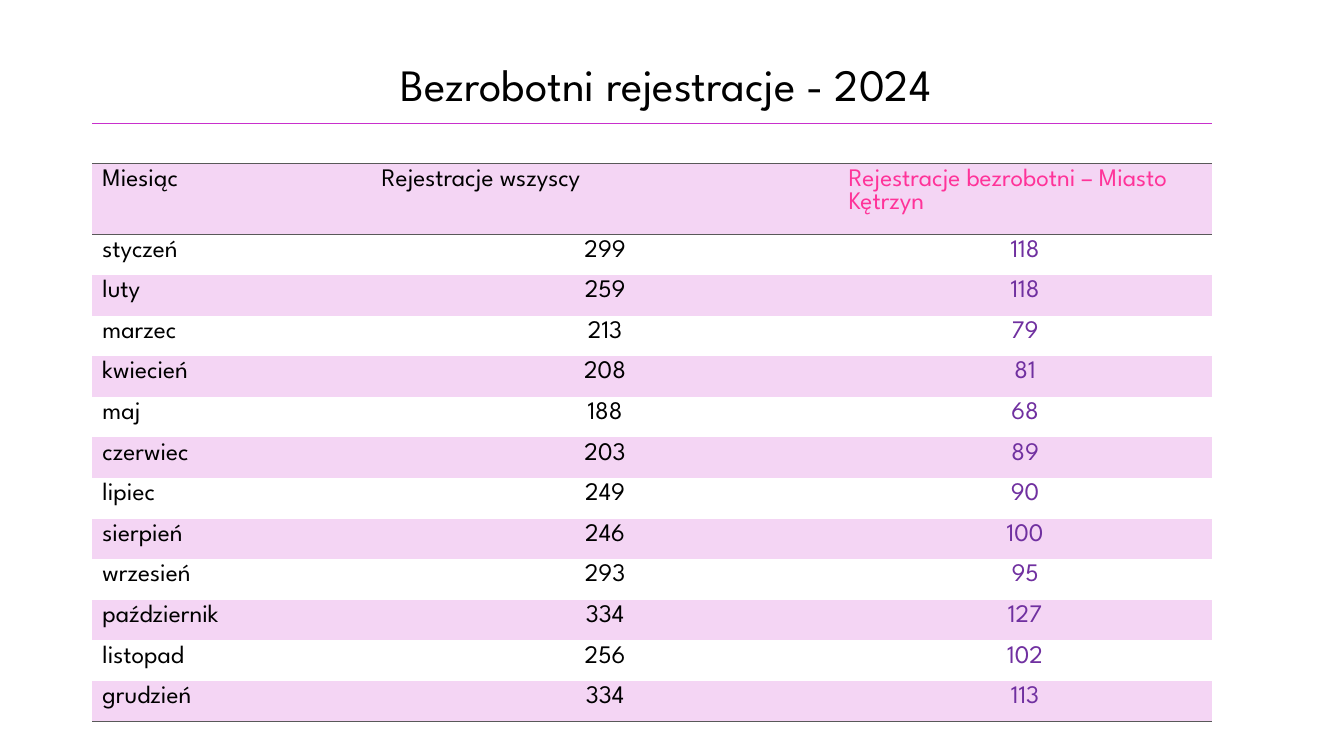
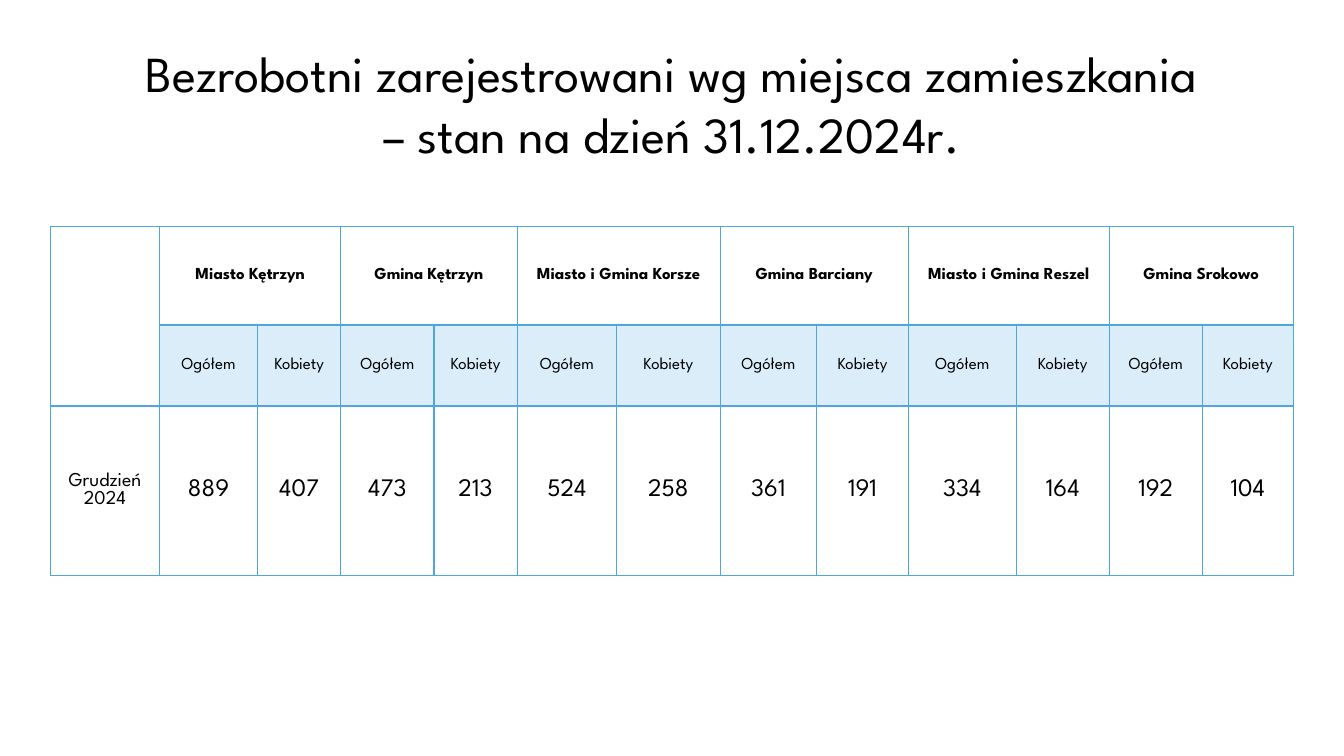
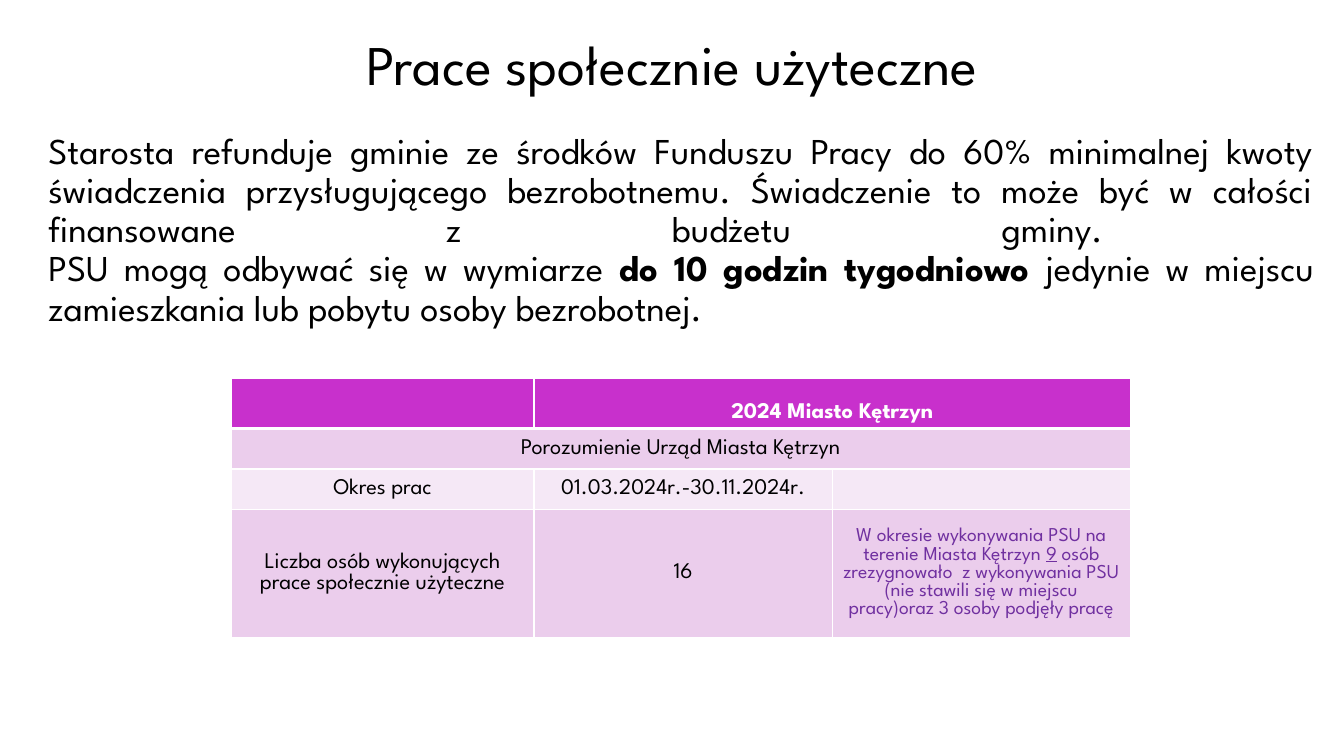
"""Builds three slides on registered unemployment in 2024."""
from pptx import Presentation
from pptx.dml.color import RGBColor
from pptx.enum.text import MSO_ANCHOR as Anchor, PP_ALIGN as Align
from pptx.oxml.ns import qn
from pptx.util import Pt
from lxml.etree import SubElement

FONT = "League Spartan"
BLACK, WHITE = "000000", "FFFFFF"
MAGENTA, PINK, PURPLE, BLUE = "C830CC", "FF3399", "7030A0", "4EA6DC"
LILAC, SKY, MAUVE, PALE_MAUVE, GREY = "F4D5F4", "DBEDF8", "EBCDEC", "F5E8F6", "595959"
NO_STYLE = "{2D5ABB26-0587-4C30-8999-92F81FD0307C}"

REGISTRATION_HEADS = ["Miesiąc", "Rejestracje wszyscy",
                      "Rejestracje bezrobotni – Miasto Kętrzyn"]
REGISTRATIONS = [
    ("styczeń", 299, 118), ("luty", 259, 118), ("marzec", 213, 79),
    ("kwiecień", 208, 81), ("maj", 188, 68), ("czerwiec", 203, 89),
    ("lipiec", 249, 90), ("sierpień", 246, 100), ("wrzesień", 293, 95),
    ("październik", 334, 127), ("listopad", 256, 102), ("grudzień", 334, 113),
]
RESIDENCE = [
    ("Miasto Kętrzyn", 889, 407), ("Gmina Kętrzyn", 473, 213),
    ("Miasto i Gmina Korsze", 524, 258), ("Gmina Barciany", 361, 191),
    ("Miasto i Gmina Reszel", 334, 164), ("Gmina Srokowo", 192, 104),
]
RESIDENCE_WIDTHS = [78, 70, 59.5, 66.5, 59.5, 71, 74, 69, 65.5, 77, 66.5, 66.5, 65]
SOCIAL_WORK = [
    ("Starosta refunduje gminie ze środków Funduszu Pracy do 60% minimalnej kwoty "
     "świadczenia przysługującego bezrobotnemu. Świadczenie to może być w całości "
     "finansowane z budżetu gminy. \nPSU mogą odbywać się w wymiarze ", {}),
    ("do 10 godzin tygodniowo", {"bold": True}),
    (" jedynie w miejscu zamieszkania lub pobytu osoby bezrobotnej.", {}),
]
RESIGNATIONS = [
    ("W okresie wykonywania PSU na terenie Miasta Kętrzyn ", {}),
    ("9", {"underline": True}),
    (" osób zrezygnowało  z wykonywania PSU (nie stawili się w miejscu pracy)"
     "oraz 3 osoby podjęły pracę", {}),
]
AGREEMENT = "Porozumienie Urząd Miasta Kętrzyn"
WORK_ROWS = [
    (PALE_MAUVE, ["Okres prac", "01.03.2024r.-30.11.2024r.", ""]),
    (MAUVE, ["Liczba osób wykonujących prace społecznie użyteczne", "16", RESIGNATIONS]),
]


def rgb(color):
    """Turn a hex string into a colour."""
    return RGBColor.from_string(color)


def write(frame, content, size=18, color=BLACK, bold=False, align=Align.LEFT, spacing=None):
    """Write a string or a list of (text, format) runs as one paragraph."""
    paragraph = frame.paragraphs[0]
    paragraph.alignment = align
    if spacing:
        paragraph.line_spacing = Pt(spacing)
    for text, extra in [(content, {})] if isinstance(content, str) else content:
        for number, line in enumerate(text.split("\n")):
            if number:
                paragraph.add_line_break()
            run = paragraph.add_run()
            run.text = line
            run.font.name, run.font.size = FONT, Pt(size)
            run.font.color.rgb = rgb(color)
            run.font.bold = extra.get("bold", bold)
            run.font.underline = extra.get("underline", False)


def add_text(slide, box, content, anchor=Anchor.TOP, **style):
    """Add a wrapped text box."""
    frame = slide.shapes.add_textbox(*map(Pt, box)).text_frame
    frame.word_wrap = True
    frame.vertical_anchor = anchor
    write(frame, content, **style)


def new_slide(deck, title, box, size):
    """Add a blank slide with a centred title."""
    slide = deck.slides.add_slide(deck.slide_layouts[6])
    add_text(slide, box, title, anchor=Anchor.MIDDLE, size=size,
             align=Align.CENTER, spacing=round(size * 1.21, 1))
    return slide


def add_grid(slide, left, top, widths, heights):
    """Add an unstyled table with the given column widths and row heights."""
    table = slide.shapes.add_table(len(heights), len(widths), Pt(left), Pt(top),
                                   Pt(sum(widths)), Pt(sum(heights))).table
    table.first_row = table.horz_banding = False
    table._tbl.tblPr.find(qn("a:tableStyleId")).text = NO_STYLE
    for column, width in zip(table.columns, widths):
        column.width = Pt(width)
    for row, height in zip(table.rows, heights):
        row.height = Pt(height)
    return table


def fill_cell(cell, content="", fill=None, anchor=Anchor.MIDDLE, borders=None, **style):
    """Set text, borders given as {side: (colour, width)}, and fill of a cell."""
    cell.vertical_anchor = anchor
    if content:
        write(cell.text_frame, content, **style)
    properties = cell._tc.get_or_add_tcPr()
    for side in "LRTB":
        if side in (borders or {}):
            color, width = borders[side]
            line = SubElement(properties, qn(f"a:ln{side}"), w=str(Pt(width)))
            SubElement(SubElement(line, qn("a:solidFill")), qn("a:srgbClr"), val=color)
    if fill:
        cell.fill.solid()
        cell.fill.fore_color.rgb = rgb(fill)
    else:
        cell.fill.background()


def frame_sides(color, bottom=1):
    """Give four one-point borders, with a chosen bottom width."""
    return {**{side: (color, 1) for side in "LRT"}, "B": (color, bottom)}


def registrations_slide(deck):
    """Monthly registrations."""
    slide = new_slide(deck, "Bezrobotni rejestracje - 2024", (66, 30, 820, 59), 32)
    months = len(REGISTRATIONS)
    table = add_grid(slide, 66, 88, [199.5, 333.5, 266.5], [29, 40.5] + [29] * months)
    table.cell(0, 0).merge(table.cell(0, 2))
    for column in range(3):
        fill_cell(table.cell(0, column), borders={"T": (MAGENTA, 1), "B": (GREY, 1)})
    for row, values in enumerate([REGISTRATION_HEADS] + REGISTRATIONS, 1):
        head = row == 1
        borders = {"T": (GREY, 1)} if head else {"B": (GREY, 1)} if row > months else None
        for column, value in enumerate(values):
            accent = PINK if head else PURPLE
            fill_cell(table.cell(row, column), str(value), LILAC if row % 2 else None,
                      Anchor.TOP, borders, color=accent if column == 2 else BLACK,
                      align=Align.LEFT if head or column == 0 else Align.CENTER)


def residence_slide(deck):
    """Unemployed people by place of residence."""
    slide = new_slide(deck, "Bezrobotni zarejestrowani wg miejsca zamieszkania\n"
                      "– stan na dzień 31.12.2024r.", (26, 21, 908, 104), 36)
    table = add_grid(slide, 36, 162, RESIDENCE_WIDTHS, [70, 58, 121])
    thin, thick = frame_sides(BLUE), frame_sides(BLUE, 2)
    table.cell(0, 0).merge(table.cell(1, 0))
    for row in range(2):
        fill_cell(table.cell(row, 0), borders=thick)
    fill_cell(table.cell(2, 0), "Grudzień 2024", borders=thin, size=14, align=Align.CENTER)
    for number, (place, total, women) in enumerate(RESIDENCE):
        first = 1 + 2 * number
        table.cell(0, first).merge(table.cell(0, first + 1))
        fill_cell(table.cell(0, first), place, borders=thick, size=12, bold=True,
                  align=Align.CENTER)
        fill_cell(table.cell(0, first + 1), borders=thick)
        for column, (label, count) in enumerate([("Ogółem", total), ("Kobiety", women)], first):
            fill_cell(table.cell(1, column), label, SKY, size=12, align=Align.CENTER,
                      borders={**thin, "T": (BLUE, 2)})
            fill_cell(table.cell(2, column), str(count), borders=thin, align=Align.CENTER)


def social_work_slide(deck):
    """Socially useful work."""
    slide = new_slide(deck, "Prace społecznie użyteczne", (66, 17.5, 828, 55), 40)
    add_text(slide, (27.5, 91, 918.5, 150), SOCIAL_WORK, size=26,
             align=Align.JUSTIFY, spacing=28)
    table = add_grid(slide, 165, 270, [216.5, 213, 213], [36, 29, 29, 72])
    thin, thick = frame_sides(WHITE), frame_sides(WHITE, 3)
    table.cell(0, 1).merge(table.cell(0, 2))
    table.cell(1, 0).merge(table.cell(1, 2))
    for column, text in enumerate(["", "2024 Miasto Kętrzyn", ""]):
        fill_cell(table.cell(0, column), text, MAGENTA, Anchor.BOTTOM, thick, size=16,
                  color=WHITE, bold=True, align=Align.CENTER)
    for row, (fill, texts) in enumerate([(MAUVE, [AGREEMENT, "", ""])] + WORK_ROWS, 1):
        borders = {**thin, "T": (WHITE, 3)} if row == 1 else thin
        for column, text in enumerate(texts):
            note = text is RESIGNATIONS
            fill_cell(table.cell(row, column), text, fill, borders=borders,
                      size=14 if note else 16, color=PURPLE if note else BLACK,
                      align=Align.CENTER)


def main():
    """Build and save the deck."""
    deck = Presentation()
    deck.slide_width, deck.slide_height = Pt(960), Pt(540)
    registrations_slide(deck)
    residence_slide(deck)
    social_work_slide(deck)
    deck.save("out.pptx")


if __name__ == "__main__":
    main()
